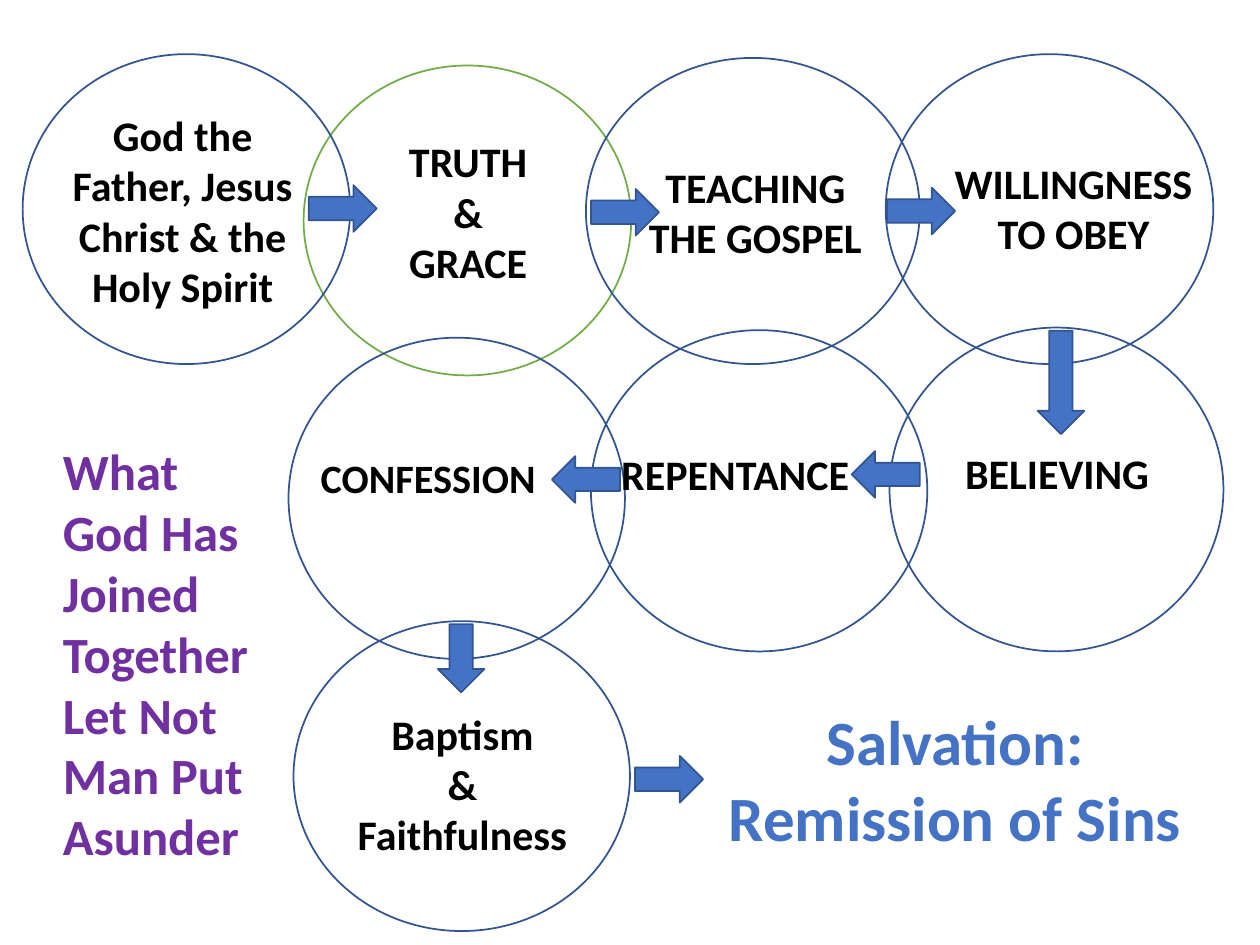
from dataclasses import dataclass
from pptx import Presentation
from pptx.dml.color import RGBColor as Rgb
from pptx.enum.shapes import MSO_SHAPE as Kind
from pptx.enum.text import MSO_AUTO_SIZE as Fit, PP_ALIGN as Align
from pptx.util import Pt

UNIT = 9144


@dataclass(frozen=True)
class Theme:
    font: str = "Calibri"
    ink: str = "000000"
    paper: str = "FFFFFF"
    edge: str = "325491"
    green: str = "70AD47"
    blue: str = "4472C4"
    plum: str = "7030A0"
    label: int = 24
    small: int = 23
    motto: int = 29
    goal: int = 36


@dataclass(frozen=True)
class Step:
    text: str
    ring: tuple
    label: tuple
    arrow: tuple
    turn: int = 0
    long: int = 54
    size: int = Theme.label
    edge: str = Theme.edge
    fill: str = ""


LOOK = Theme()
STEPS = [
    Step("TRUTH\n&\nGRACE", (241, 52, 260, 246), (47, 51, 167, 131),
         (228, 98), edge=LOOK.green, fill=LOOK.paper),
    Step("God the Father, Jesus Christ & the Holy Spirit",
         (18, 43, 260, 246), (22, 39, 210, 172), (227, 104)),
    Step("TEACHING THE GOSPEL", (465, 46, 265, 243), (27, 77, 215, 91),
         (239, 103)),
    Step("WILLINGNESS\nTO OBEY", (703, 43, 260, 246), (38, 77, 222, 91),
         (98, 242), turn=90, long=82),
    Step("BELIEVING", (706, 260, 265, 257), (39, 90, 188, 50),
         (-30, 98), turn=180),
    Step("REPENTANCE", (469, 262, 267, 255), (-7, 89, 243, 50),
         (-31, 100), turn=180),
    Step("CONFESSION", (229, 268, 267, 255), (12, 87, 198, 49),
         (110, 236), turn=90, size=LOOK.small),
    Step("Baptism\n& Faithfulness", (233, 493, 267, 246),
         (40, 64, 188, 131), (271, 107)),
]


def emu(box):
    return [n * UNIT for n in box]


def within(box, part):
    return (box[0] + part[0], box[1] + part[1], *part[2:])


def write(slide, box, text, size=LOOK.label, color=LOOK.ink,
          align=Align.CENTER):
    frame = slide.shapes.add_textbox(*emu(box)).text_frame
    frame.word_wrap = True
    frame.auto_size = Fit.SHAPE_TO_FIT_TEXT
    frame.text = text
    for para in frame.paragraphs:
        para.alignment = align
        font = para.font
        font.name, font.size, font.bold = LOOK.font, Pt(size), True
        font.color.rgb = Rgb.from_string(color)


def draw(slide, kind, box, fill="", edge=LOOK.edge, turn=0):
    shape = slide.shapes.add_shape(kind, *emu(box))
    shape.shadow.inherit = False
    shape.rotation = turn
    if fill:
        shape.fill.solid()
        shape.fill.fore_color.rgb = Rgb.from_string(fill)
    else:
        shape.fill.background()
    shape.line.color.rgb = Rgb.from_string(edge)
    shape.line.width = Pt(1)


def ring(slide, step):
    draw(slide, Kind.FLOWCHART_CONNECTOR, step.ring, step.fill, step.edge)


def inside(slide, step):
    write(slide, within(step.ring, step.label), step.text, step.size)
    box = within(step.ring, (*step.arrow, step.long, 37))
    draw(slide, Kind.RIGHT_ARROW, box, LOOK.blue, turn=step.turn)


def motto(slide, box):
    write(slide, box, "What God Has Joined Together Let Not Man Put Asunder",
          size=LOOK.motto, color=LOOK.plum, align=Align.LEFT)


def goal(slide, box):
    write(slide, box, "Salvation: Remission of Sins",
          size=LOOK.goal, color=LOOK.blue)


def main():
    deck = Presentation()
    deck.slide_width, deck.slide_height = emu((1000, 750))
    slide = deck.slides.add_slide(deck.slide_layouts[6])
    for part in (ring, inside):
        for step in STEPS:
            part(slide, step)
    motto(slide, (40, 344, 172, 364))
    goal(slide, (562, 553, 392, 131))
    deck.save("out.pptx")


if __name__ == "__main__":
    main()
